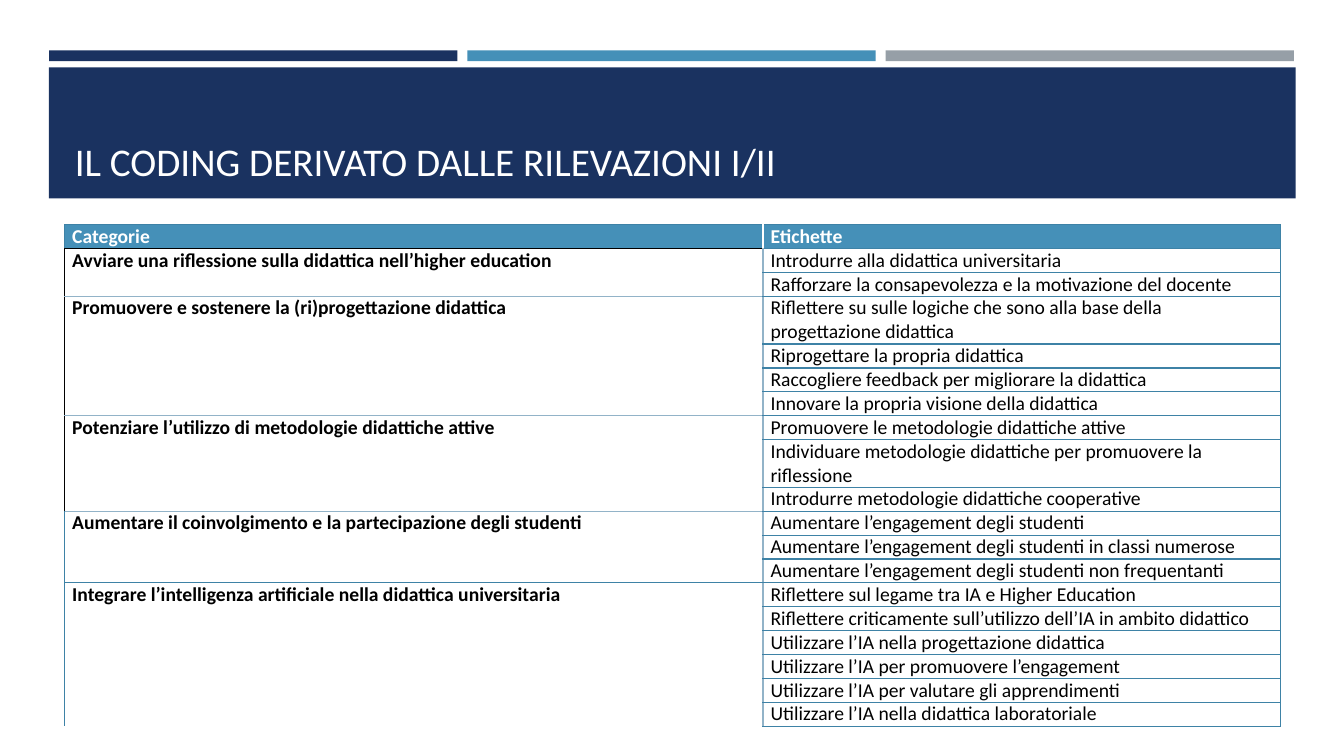
from lxml.etree import SubElement
from pptx import Presentation
from pptx.dml.color import RGBColor
from pptx.enum.shapes import MSO_SHAPE
from pptx.enum.text import MSO_ANCHOR, MSO_AUTO_SIZE, PP_ALIGN
from pptx.oxml.ns import qn
from pptx.util import Cm, Pt

TITLE = "IL CODING DERIVATO DALLE RILEVAZIONI I/II"
HEADS = ("Categorie", "Etichette")
GROUPS = [
    ("Avviare una riflessione sulla didattica nell’higher education", "black", "black", [
        "Introdurre alla didattica universitaria",
        "Rafforzare la consapevolezza e la motivazione del docente",
    ]),
    ("Promuovere e sostenere la (ri)progettazione didattica", "black", "pale", [
        "Riflettere su sulle logiche che sono alla base della progettazione didattica",
        "Riprogettare la propria didattica",
        "Raccogliere feedback per migliorare la didattica",
        "Innovare la propria visione della didattica",
    ]),
    ("Potenziare l’utilizzo di metodologie didattiche attive", "black", "pale", [
        "Promuovere le metodologie didattiche attive",
        "Individuare metodologie didattiche per promuovere la riflessione",
        "Introdurre metodologie didattiche cooperative",
    ]),
    ("Aumentare il coinvolgimento e la partecipazione degli studenti", "edge", "pale", [
        "Aumentare l’engagement degli studenti",
        "Aumentare l’engagement degli studenti in classi numerose",
        "Aumentare l’engagement degli studenti non frequentanti",
    ]),
    ("Integrare l’intelligenza artificiale nella didattica universitaria", "edge", "edge", [
        "Riflettere sul legame tra IA e Higher Education",
        "Riflettere criticamente sull’utilizzo dell’IA in ambito didattico",
        "Utilizzare l’IA nella progettazione didattica",
        "Utilizzare l’IA per promuovere l’engagement",
        "Utilizzare l’IA per valutare gli apprendimenti",
        "Utilizzare l’IA nella didattica laboratoriale",
    ]),
]
COLORS = {"navy": "1A3260", "blue": "4590B8", "gray": "969FA7", "white": "FFFFFF",
          "black": "000000", "edge": "3E82A6", "pale": "92B3C8"}
BARS = ("navy", "blue", "gray")
FONT = "Calibri"


def color(name):
    return RGBColor.from_string(COLORS[name])


def style(par, size, name, bold=False):
    par.font.name, par.font.size, par.font.bold = FONT, Pt(size), bold
    par.font.color.rgb = color(name)


def block(left, top, width, height, name):
    shape = slide.shapes.add_shape(MSO_SHAPE.RECTANGLE, Cm(left), Cm(top), Cm(width), Cm(height))
    shape.shadow.inherit = False
    shape.fill.solid()
    shape.fill.fore_color.rgb = color(name)
    shape.line.fill.background()
    title._element.addprevious(shape._element)


def border(cell, sides):
    props = cell._tc.get_or_add_tcPr()
    for side in "LRTB":
        if side in sides:
            line = SubElement(props, qn(f"a:ln{side}"), w=str(Pt(1)))
            fill = SubElement(line, qn("a:solidFill"))
            SubElement(fill, qn("a:srgbClr"), val=COLORS[sides[side]])


def put(row, col, text, ink, bold, back, sides):
    cell = table.cell(row, col)
    cell.margin_left = cell.margin_right = Cm(0.19)
    cell.margin_top = cell.margin_bottom = 0
    par = cell.text_frame.paragraphs[0]
    par.text = text
    style(par, 14, ink, bold)
    border(cell, sides)
    cell.fill.solid()
    cell.fill.fore_color.rgb = color(back)


deck = Presentation()
deck.slide_width, deck.slide_height = Cm(33.87), Cm(19.05)
slide = deck.slides.add_slide(deck.slide_layouts[5])

title = slide.shapes.title
title.left, title.top, title.width, title.height = Cm(1.63), Cm(1.96), Cm(30.63), Cm(2.82)
frame = title.text_frame
frame.text = TITLE
frame.auto_size = MSO_AUTO_SIZE.NONE
frame.vertical_anchor = MSO_ANCHOR.BOTTOM
frame.paragraphs[0].alignment = PP_ALIGN.LEFT
style(frame.paragraphs[0], 28, "white")

for i, name in enumerate(BARS):
    block(1.24 + 10.54 * i, 1.27, 10.29, 0.27, name)
block(1.23, 1.7, 31.42, 3.3, "navy")

count = 1 + sum(len(tags) for *_, tags in GROUPS)
table = slide.shapes.add_table(count, 2, Cm(1.63), Cm(5.66), Cm(30.64), Cm(0.6 * count)).table
table.horz_banding = False
table.columns[0].width, table.columns[1].width = Cm(17.6), Cm(13.04)
for row in table.rows:
    row.height = Cm(0.6)

put(0, 0, HEADS[0], "white", True, "blue", {"L": "edge", "T": "edge", "B": "black"})
put(0, 1, HEADS[1], "white", True, "blue", {"R": "edge", "T": "edge", "B": "edge"})
top = 1
lows = [group[2] for group in GROUPS[1:]] + ["edge"]
for (name, left, high, tags), low in zip(GROUPS, lows):
    last = len(tags) - 1
    for i, tag in enumerate(tags):
        sides = {"L": left, "R": "pale"}
        if i == 0:
            sides["T"] = high
        if i == last:
            sides["B"] = low
        put(top + i, 0, "" if i else name, "black", True, "white", sides)
        put(top + i, 1, tag, "black", False, "white",
            {"L": "pale", "R": "edge", "T": "edge", "B": "edge"})
    table.cell(top, 0).merge(table.cell(top + last, 0))
    top += len(tags)

deck.save("out.pptx")
